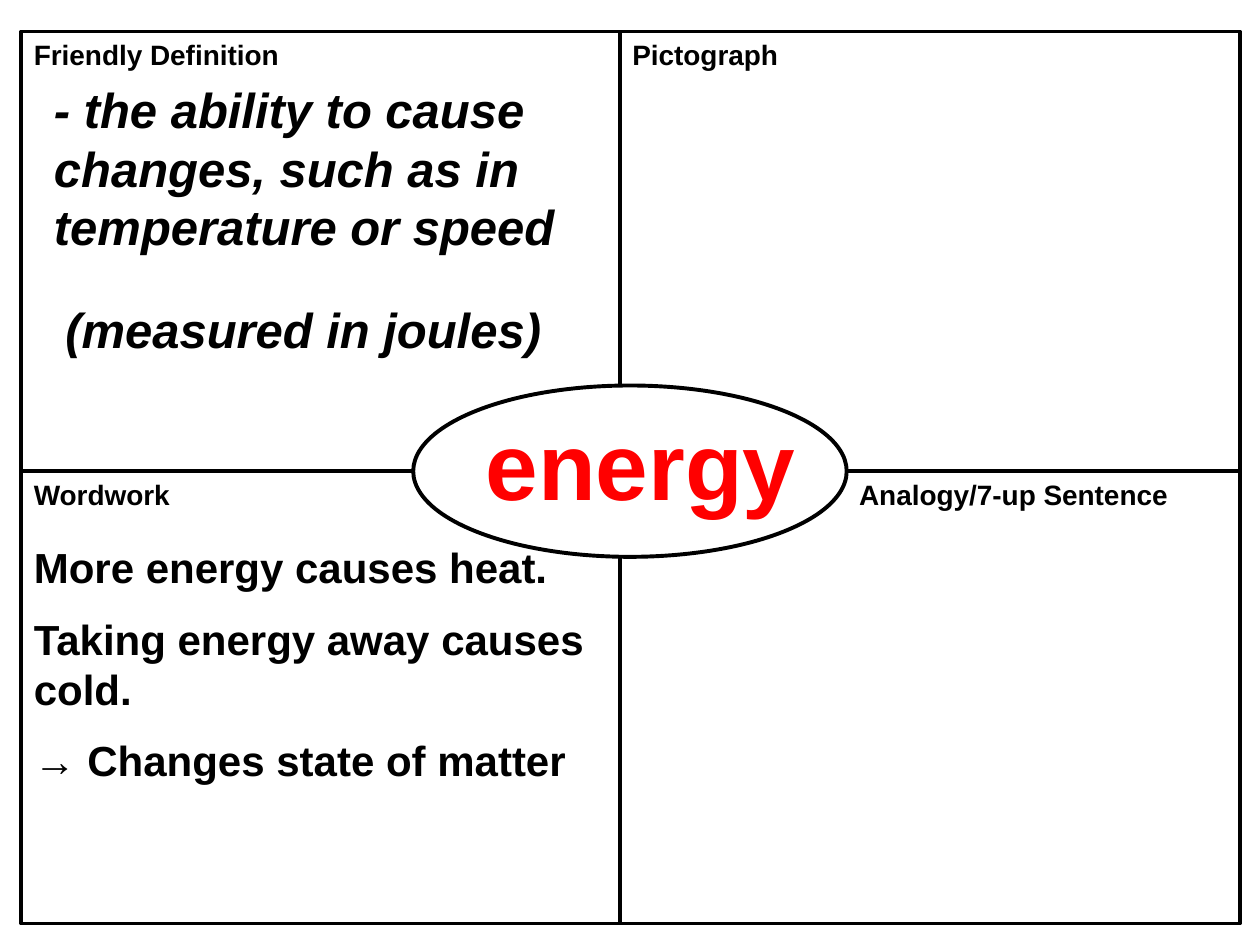
from pptx import Presentation
from pptx import util as u
from pptx.dml.color import RGBColor
from pptx.enum import shapes, text
from lxml import etree

W, H = 10, 7.5
LEFT, MID, RIGHT = 0.17, 4.92, 9.84
TOP, ROW, BOTTOM = 0.25, 3.74, 7.33
OVAL_W, OVAL_H = 3.44, 1.36
OVAL_X, OVAL_Y = (W - OVAL_W) / 2, ROW - OVAL_H / 2
BLACK, RED, WHITE = "000000", "FF0000", "FFFFFF"

HEADINGS = [
    ("Friendly Definition", LEFT, TOP, 2.95),
    ("Pictograph", MID, TOP, 3.28),
    ("Wordwork", LEFT, ROW, 2.95),
    ("Analogy/7-up Sentence", OVAL_X + OVAL_W, ROW, 3.28),
]
DEFINITION = ["- the ability to cause changes, such as in temperature or speed"]
UNIT = ["(measured in joules)"]
WORD = ["energy"]
WORDWORK = [
    "More energy causes heat.",
    "Taking energy away causes cold.",
    "→ Changes state of matter",
]


def color(value):
    return RGBColor.from_string(value)


def outline(sp):
    sp.line.color.rgb = color(BLACK)
    sp.line.width = u.Pt(2.25)


def add_outlined(s, kind, x, y, w, h):
    sp = s.shapes.add_shape(kind, *map(u.Inches, (x, y, w, h)))
    sp.shadow.inherit = False
    sp.fill.solid()
    sp.fill.fore_color.rgb = color(WHITE)
    outline(sp)


def add_line(s, *ends):
    sp = s.shapes.add_connector(shapes.MSO_CONNECTOR.STRAIGHT, *map(u.Inches, ends))
    outline(sp)
    ns = "http://schemas.openxmlformats.org/drawingml/2006/main"
    etree.SubElement(sp._element.spPr, f"{{{ns}}}effectLst")


def add_text(s, lines, x, y, w, h, size, fill=BLACK, italic=False, align=None):
    tf = s.shapes.add_textbox(*map(u.Inches, (x, y, w, h))).text_frame
    tf.word_wrap = True
    tf.text = "\n".join(lines)
    for i, p in enumerate(tf.paragraphs):
        p.alignment = align
        if i:
            p.space_before = u.Pt(size / 2)
        for r in p.runs:
            r.font.name = "Arial"
            r.font.size = u.Pt(size)
            r.font.bold = True
            r.font.italic = italic
            r.font.color.rgb = color(fill)


def main():
    prs = Presentation()
    prs.slide_width, prs.slide_height = u.Inches(W), u.Inches(H)
    s = prs.slides.add_slide(prs.slide_layouts[6])

    add_outlined(s, shapes.MSO_SHAPE.RECTANGLE, LEFT, TOP, RIGHT - LEFT, BOTTOM - TOP)
    add_line(s, MID, TOP, MID, BOTTOM)
    add_line(s, LEFT, ROW, RIGHT, ROW)
    add_outlined(s, shapes.MSO_SHAPE.OVAL, OVAL_X, OVAL_Y, OVAL_W, OVAL_H)

    for heading, x, y, w in HEADINGS:
        add_text(s, [heading], x, y, w, 0.39, 16)
    add_text(s, DEFINITION, 0.33, 0.58, 4.58, 1.51, 28, italic=True)
    add_text(s, WORD, 3.42, 3.17, 3.33, 1, 54, RED, align=text.PP_ALIGN.CENTER)
    add_text(s, UNIT, 0.42, 2.33, 4.17, 0.57, 28, italic=True)
    add_text(s, WORDWORK, LEFT, 4.25, 4.67, 2.12, 24)

    prs.save("out.pptx")


if __name__ == "__main__":
    main()
